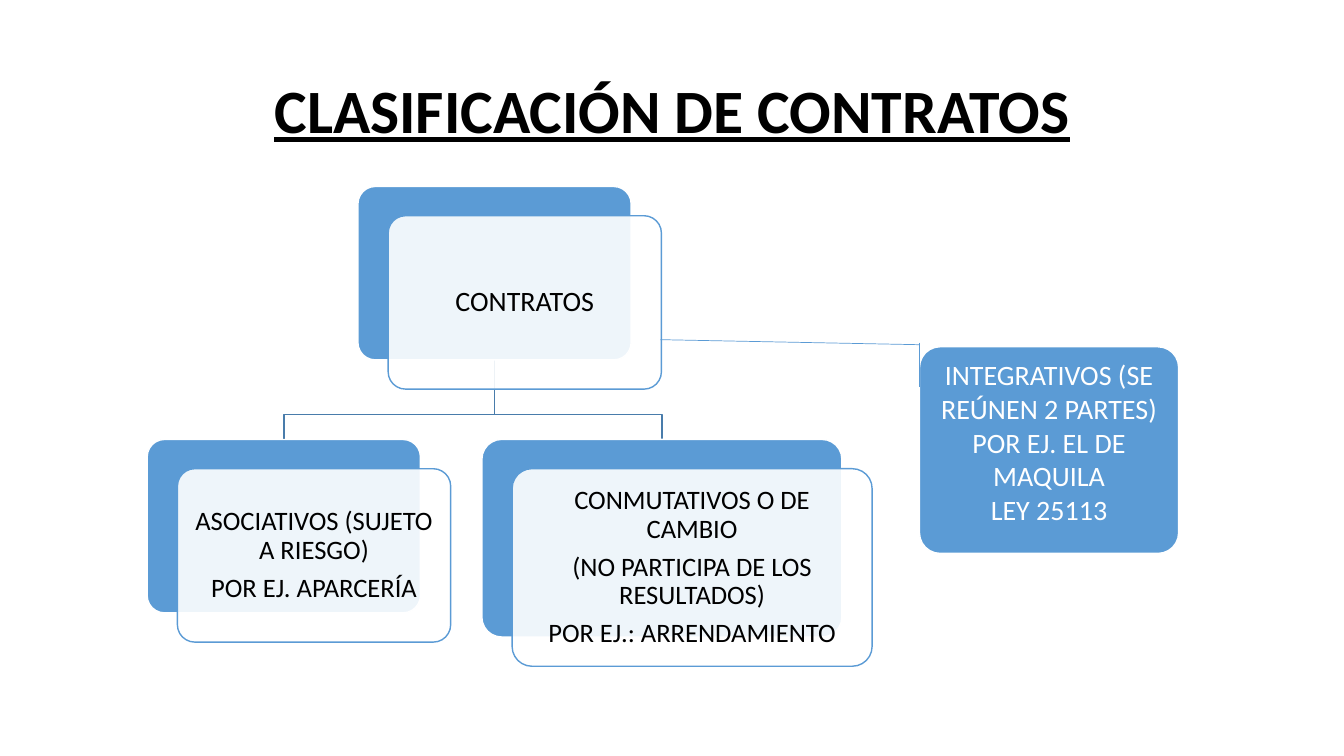
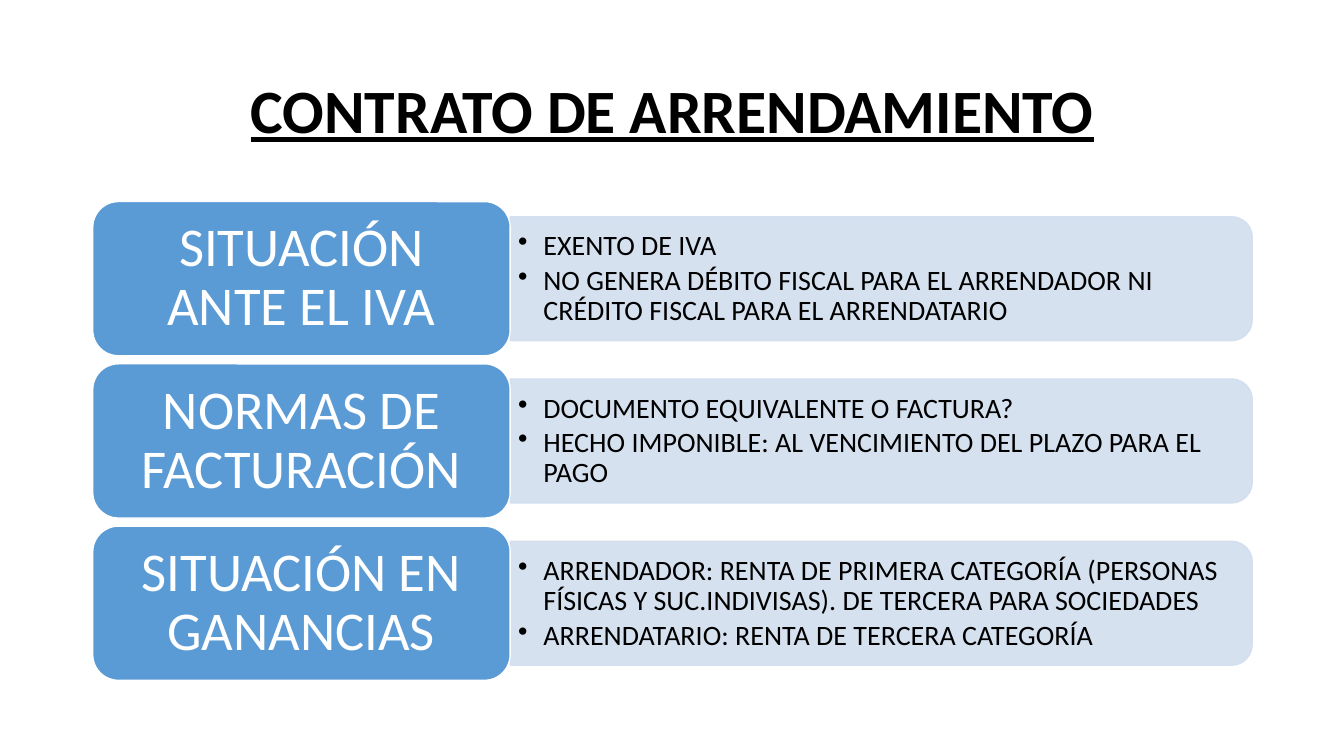
from pptx import Presentation
from pptx.dml.color import RGBColor
from pptx.enum import shapes, text
from pptx.oxml import ns, xmlchemy
from pptx.util import Inches, Pt

FONT = "Calibri"
BLUE, PALE, BRANCH = "5B9BD5", "D2DEEF", "497CAB"
WHITE, BLACK = "FFFFFF", "000000"
MIDDLE, TOP = text.MSO_ANCHOR.MIDDLE, text.MSO_ANCHOR.TOP
ROUNDED = shapes.MSO_SHAPE.ROUNDED_RECTANGLE
TITLE_BOX = (0.92, 0.4, 11.5, 1.45)

CLASSES_TITLE = "CLASIFICACIÓN DE CONTRATOS"
CARDS = [
    ((3.55, 1.85, 2.71, 1.72), 20, ["CONTRATOS"]),
    ((1.46, 4.36, 2.71, 1.72), 19,
     ["ASOCIATIVOS (SUJETO A RIESGO)", "POR EJ. APARCERÍA"]),
    ((4.78, 4.36, 3.57, 1.96), 19,
     ["CONMUTATIVOS O DE CAMBIO", "(NO PARTICIPA DE LOS RESULTADOS)",
      "POR EJ.: ARRENDAMIENTO"]),
]
CARD_SHIFT = (0.3, 0.29)
BRANCH_Y = 4.11
INTEGRATIVE_BOX = (9.12, 3.44, 2.57, 2.05)
INTEGRATIVE = ["INTEGRATIVOS (SE REÚNEN 2 PARTES) POR EJ. EL DE MAQUILA",
               "LEY 25113"]
LINKS = [(6.55, 3.37, 9.12, 3.42), (9.12, 3.4, 9.12, 3.84)]

LEASE_TITLE = "CONTRATO DE ARRENDAMIENTO"
TOPICS = [
    ("SITUACIÓN ANTE EL IVA",
     ["EXENTO DE IVA",
      "NO GENERA DÉBITO FISCAL PARA EL ARRENDADOR NI CRÉDITO FISCAL PARA EL ARRENDATARIO"]),
    ("NORMAS DE FACTURACIÓN",
     ["DOCUMENTO EQUIVALENTE O FACTURA?",
      "HECHO IMPONIBLE: AL VENCIMIENTO DEL PLAZO PARA EL PAGO"]),
    ("SITUACIÓN EN GANANCIAS",
     ["ARRENDADOR: RENTA DE PRIMERA CATEGORÍA (PERSONAS FÍSICAS Y SUC.INDIVISAS). DE TERCERA PARA SOCIEDADES",
      "ARRENDATARIO: RENTA DE TERCERA CATEGORÍA"]),
]
TOPIC_LEFT, TOPIC_TOP, TOPIC_STEP = 0.92, 2, 1.61
LABEL_W, LABEL_H = 4.14, 1.53
DETAIL_W, DETAIL_H, DETAIL_TEXT_W = 7.36, 1.23, 7.3


def rgb(color):
    return RGBColor.from_string(color)


def inches(values):
    return [Inches(value) for value in values]


def write(host, paragraphs, size=20, color=BLACK, bold=False, underline=False,
          align=text.PP_ALIGN.CENTER, anchor=MIDDLE, insets=(0.1, 0.05),
          spacing=0.9, after=0, bullet=False):
    frame = host.text_frame
    frame.word_wrap = True
    frame.vertical_anchor = anchor
    frame.margin_left = frame.margin_right = Inches(insets[0])
    frame.margin_top = frame.margin_bottom = Inches(insets[1])
    for index, words in enumerate(paragraphs):
        paragraph = frame.add_paragraph() if index else frame.paragraphs[0]
        paragraph.alignment = align
        paragraph.line_spacing = spacing
        paragraph.space_after = Pt(after)
        run = paragraph.add_run()
        run.text = words
        font = run.font
        font.name, font.size, font.bold, font.underline = FONT, Pt(size), bold, underline
        font.color.rgb = rgb(color)
        if bullet:
            props = paragraph._p.get_or_add_pPr()
            props.set("marL", str(Inches(0.25)))
            props.set("indent", str(Inches(-0.25)))
            mark = xmlchemy.OxmlElement("a:buChar")
            mark.set("char", "•")
            props.append(mark)


def add_text(slide, box, paragraphs, **style):
    write(slide.shapes.add_textbox(*inches(box)), paragraphs, **style)


def set_opacity(holder, percent):
    alpha = xmlchemy.OxmlElement("a:alpha")
    alpha.set("val", str(percent * 1000))
    holder.find(ns.qn("a:solidFill"))[0].append(alpha)


def add_box(slide, box, fill, line, kind=ROUNDED, corner=None, opacity=None):
    shape = slide.shapes.add_shape(kind, *inches(box))
    shape.shadow.inherit = False
    shape.fill.solid()
    shape.fill.fore_color.rgb = rgb(fill)
    shape.line.color.rgb = rgb(line)
    shape.line.width = Pt(1)
    if corner is not None:
        shape.adjustments[0] = corner
    if opacity:
        set_opacity(shape._element.spPr, opacity)
    return shape


def add_branch(slide, parent, child):
    (px, py, pw, ph), (cx, cy, cw, _) = parent, child
    start, end = px + pw / 2, cx + cw / 2
    outline = slide.shapes.build_freeform(Inches(start), Inches(py + ph))
    corners = [(start, BRANCH_Y), (end, BRANCH_Y), (end, cy)]
    outline.add_line_segments([inches(corner) for corner in corners], close=False)
    branch = outline.convert_to_shape()
    branch.shadow.inherit = False
    branch.fill.background()
    branch.line.color.rgb = rgb(BRANCH)
    branch.line.width = Pt(1)


def add_link(slide, ends):
    link = slide.shapes.add_connector(shapes.MSO_CONNECTOR.STRAIGHT, *inches(ends))
    link.line.color.rgb = rgb(BLUE)
    link.line.width = Pt(0.5)
    link._element.spPr.append(xmlchemy.OxmlElement("a:effectLst"))


def add_card(slide, box, size, paragraphs):
    add_box(slide, box, BLUE, WHITE, corner=0.1)
    left, top, width, height = box
    front = (left + CARD_SHIFT[0], top + CARD_SHIFT[1], width, height)
    face = add_box(slide, front, WHITE, BLUE, corner=0.1, opacity=90)
    write(face, paragraphs, size=size, insets=(0.08, 0.08), after=size * 0.35)


def add_topic(slide, top, name, details):
    detail_left = TOPIC_LEFT + LABEL_W
    middle = top + LABEL_H / 2
    turned = (detail_left + (DETAIL_W - DETAIL_H) / 2, middle - DETAIL_W / 2,
              DETAIL_H, DETAIL_W)
    panel = add_box(slide, turned, PALE, PALE, opacity=90,
                    kind=shapes.MSO_SHAPE.ROUND_2_SAME_RECTANGLE)
    panel.rotation = 90
    set_opacity(panel.line._ln, 90)
    add_text(slide, (detail_left, middle - 0.55, DETAIL_TEXT_W, 1.11), details,
             align=text.PP_ALIGN.LEFT, insets=(0.08, 0.04), after=3, bullet=True)
    label = add_box(slide, (TOPIC_LEFT, top, LABEL_W, LABEL_H), BLUE, WHITE)
    write(label, [name], size=39, color=WHITE, insets=(0.16, 0.08), after=13.65)


def add_slide(deck, title):
    slide = deck.slides.add_slide(deck.slide_layouts[6])
    add_text(slide, TITLE_BOX, [title], size=44, bold=True, underline=True)
    return slide


def main():
    deck = Presentation()
    deck.slide_width, deck.slide_height = Inches(13.33), Inches(7.5)

    classes = add_slide(deck, CLASSES_TITLE)
    root, *children = [box for box, _, _ in CARDS]
    for child in reversed(children):
        add_branch(classes, root, child)
    for card in CARDS:
        add_card(classes, *card)
    integrative = add_box(classes, INTEGRATIVE_BOX, BLUE, WHITE, corner=0.1)
    write(integrative, INTEGRATIVE, color=WHITE, anchor=TOP, spacing=1.0)
    for ends in LINKS:
        add_link(classes, ends)

    lease = add_slide(deck, LEASE_TITLE)
    for row, (name, details) in enumerate(TOPICS):
        add_topic(lease, TOPIC_TOP + row * TOPIC_STEP, name, details)

    deck.save("out.pptx")


if __name__ == "__main__":
    main()
